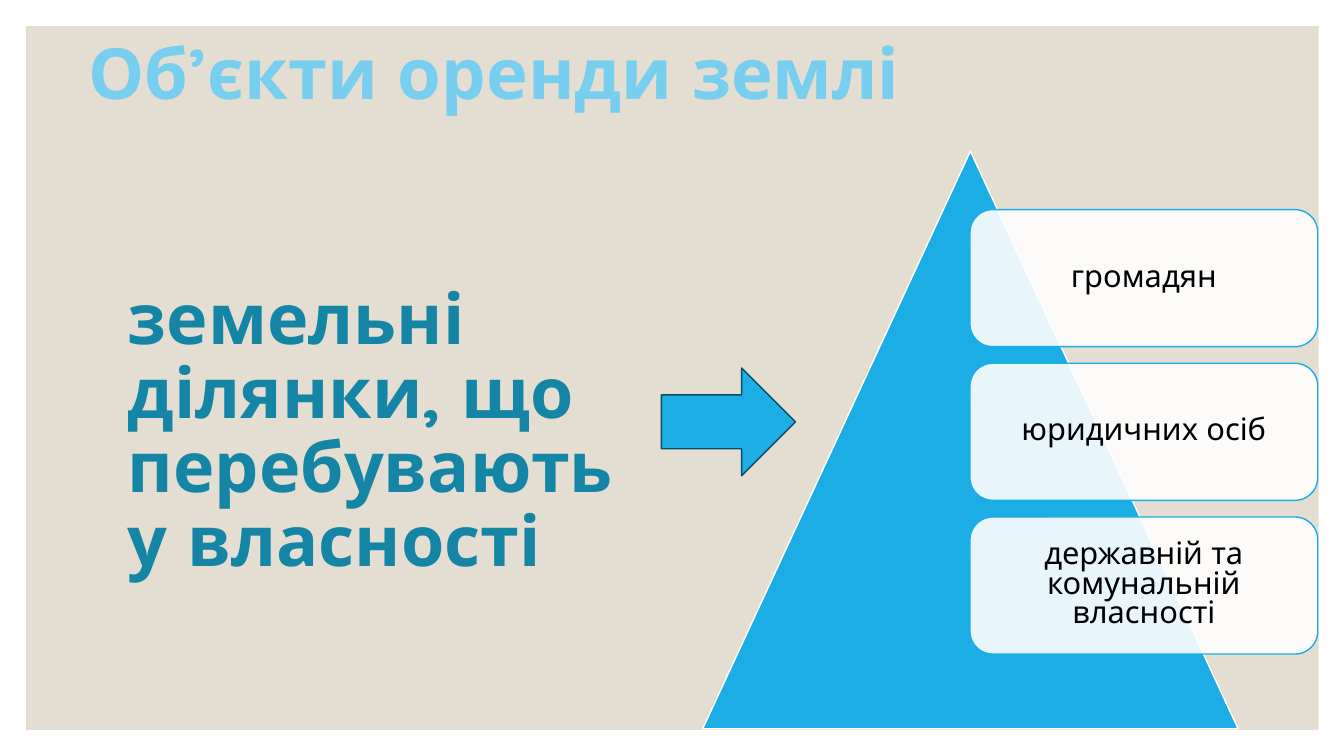
from pptx import Presentation
from pptx.dml.color import RGBColor
from pptx.enum.shapes import MSO_SHAPE as Shape
from pptx.enum.text import MSO_ANCHOR as Anchor, PP_ALIGN as Align
from pptx.oxml.ns import qn
from pptx.util import Inches, Pt
from lxml.etree import SubElement

COLORS = {
    "panel": "E3DED1",
    "title": "77CEEF",
    "body": "1485A4",
    "accent": "1CADE4",
    "edge": "0C4C64",
    "white": "FFFFFF",
    "black": "000000",
}


def color(name):
    return RGBColor.from_string(COLORS[name])


def write(sp, text, size, ink, bold=False, align=Align.LEFT, anchor=Anchor.TOP, spacing=0.9):
    tf = sp.text_frame
    tf.word_wrap = True
    tf.vertical_anchor = anchor
    p = tf.paragraphs[0]
    p.alignment = align
    p.line_spacing = spacing
    r = p.add_run()
    r.text = text
    r.font.name = "Quicksand"
    r.font.size = Pt(size)
    r.font.bold = bold
    r.font.color.rgb = color(ink)


class Deck:
    """Draws styled elements on a slide, placed in percent of its width and height."""

    def __init__(self, width=13.33, height=7.5):
        self.prs = Presentation()
        self.prs.slide_width = Inches(width)
        self.prs.slide_height = Inches(height)
        self.s = self.prs.slides.add_slide(self.prs.slide_layouts[6])

    def box(self, x, y, w, h):
        col, row = self.prs.slide_width / 100, self.prs.slide_height / 100
        return int(x * col), int(y * row), int(w * col), int(h * row)

    def shape(self, kind, at, fill, line=None, alpha=None):
        sp = self.s.shapes.add_shape(kind, *self.box(*at))
        sp.shadow.inherit = False
        sp.fill.solid()
        sp.fill.fore_color.rgb = color(fill)
        if alpha:
            tint = sp.fill._xPr.find(qn("a:solidFill"))[0]
            SubElement(tint, qn("a:alpha")).set("val", str(alpha * 1000))
        if line:
            sp.line.color.rgb = color(line)
            sp.line.width = Pt(1)
        else:
            sp.line.fill.background()
        return sp

    def text(self, at, text, **style):
        sp = self.s.shapes.add_textbox(*self.box(*at))
        write(sp, text, **style)

    def card(self, at, text):
        sp = self.shape(Shape.ROUNDED_RECTANGLE, at, "white", "accent", alpha=90)
        write(sp, text, size=22, ink="black", align=Align.CENTER, anchor=Anchor.MIDDLE, spacing=0.8)


def main():
    deck = Deck()
    deck.shape(Shape.RECTANGLE, (1.95, 3.47, 96.17, 93.07), "panel")
    deck.text((5.85, 4.4, 82.5, 12.67), "Об’єкти оренди землі", size=50.4, ink="title", bold=True)
    deck.text((8.78, 37.07, 39, 46), "земельні ділянки, що перебувають у власності",
              size=50, ink="body", bold=True, spacing=0.88)
    deck.shape(Shape.ISOSCELES_TRIANGLE, (52.29, 20, 39.83, 76.4), "accent", "white")
    owners = ["громадян", "юридичних осіб", "державній та комунальній власності"]
    for i, owner in enumerate(owners):
        deck.card((72.17, 27.73 + 20.33 * i, 25.88, 18.13), owner)
    deck.shape(Shape.RIGHT_ARROW, (49.21, 48.67, 9.98, 14.27), "accent", "edge")
    deck.prs.save("out.pptx")


if __name__ == "__main__":
    main()
